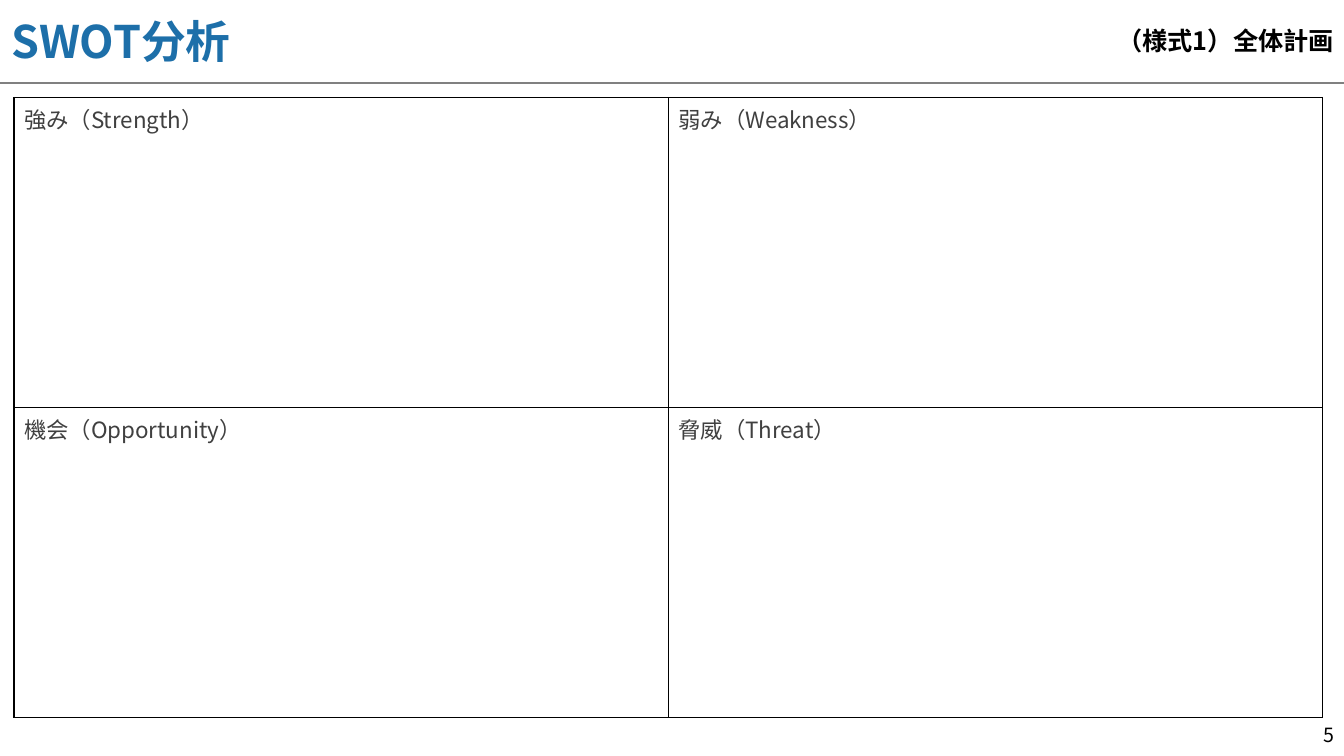
"""Build a one-page SWOT analysis form with a title, a form label and a 2 by 2 grid."""
import pptx
import pptx.dml.color
import pptx.enum.shapes
import pptx.enum.text
import pptx.oxml.ns
import pptx.util
from lxml import etree

Pt = pptx.util.Pt
RGBColor = pptx.dml.color.RGBColor
Align = pptx.enum.text.PP_ALIGN
Anchor = pptx.enum.text.MSO_ANCHOR
qn = pptx.oxml.ns.qn

TITLE = "SWOT分析"
FORM_LABEL = "（様式1）全体計画"
PAGE_NUMBER = "5"
SWOT = [
    ["強み（Strength）", "弱み（Weakness）"],
    ["機会（Opportunity）", "脅威（Threat）"],
]

FONT = "Noto Sans CJK JP"
BLUE = RGBColor(0x1D, 0x6F, 0xA9)
BLACK = RGBColor(0, 0, 0)
GRAY = RGBColor(0x80, 0x80, 0x80)
DARK_GRAY = RGBColor(0x40, 0x40, 0x40)
WIDTH, HEIGHT = 960, 540
RULE_TOP = 59
GRID_LEFT, GRID_TOP, GRID_WIDTH, GRID_HEIGHT = 10, 69.6, 934.8, 442.8
BORDER_WIDTH = 1


def write(frame, text, size, color, bold=False, align=Align.LEFT):
    """Put one formatted paragraph into a text frame."""
    frame.text = text
    frame.word_wrap = True
    para = frame.paragraphs[0]
    para.alignment = align
    para.space_before = Pt(0)
    font = para.font
    font.name, font.size, font.bold = FONT, Pt(size), bold
    font.color.rgb = color
    latin = para._p.pPr.find(qn("a:defRPr")).find(qn("a:latin"))
    east_asian = etree.Element(qn("a:ea"), typeface=FONT)
    latin.addnext(east_asian)


def place(shape, left, top, width, height):
    """Move and size a shape."""
    shape.left, shape.top = Pt(left), Pt(top)
    shape.width, shape.height = Pt(width), Pt(height)


def add_label(page, bounds, anchor, *text_style, **text_options):
    """Add a text box with one formatted paragraph."""
    box = page.shapes.add_textbox(*map(Pt, bounds))
    box.text_frame.vertical_anchor = anchor
    write(box.text_frame, *text_style, **text_options)


def outline(cell):
    """Draw all four borders of a table cell."""
    properties = cell._tc.get_or_add_tcPr()
    for position, side in enumerate(("lnL", "lnR", "lnT", "lnB")):
        border = etree.Element(qn(f"a:{side}"), w=str(Pt(BORDER_WIDTH)))
        fill = etree.SubElement(border, qn("a:solidFill"))
        etree.SubElement(fill, qn("a:srgbClr"), val=str(BLACK))
        properties.insert(position, border)


def add_rule(page):
    """Draw the line below the title."""
    rule = page.shapes.add_connector(
        pptx.enum.shapes.MSO_CONNECTOR.STRAIGHT,
        Pt(0), Pt(RULE_TOP), Pt(WIDTH), Pt(RULE_TOP))
    rule.line.color.rgb = GRAY
    rule.line.width = Pt(1.5)
    etree.SubElement(rule._element.spPr, qn("a:effectLst"))


def add_grid(page):
    """Add the SWOT table with equal columns and rows."""
    rows, columns = len(SWOT), len(SWOT[0])
    grid = page.shapes.add_table(
        rows, columns, Pt(GRID_LEFT), Pt(GRID_TOP),
        Pt(GRID_WIDTH), Pt(GRID_HEIGHT)).table
    grid.first_row = grid.horz_banding = False
    for row, headings in enumerate(SWOT):
        for column, heading in enumerate(headings):
            cell = grid.cell(row, column)
            cell.fill.background()
            write(cell.text_frame, heading, 16, DARK_GRAY)
            outline(cell)


def main():
    """Build and save the deck."""
    deck = pptx.Presentation()
    deck.slide_width, deck.slide_height = Pt(WIDTH), Pt(HEIGHT)
    page = deck.slides.add_slide(deck.slide_layouts.get_by_name("Title Only"))
    title = page.shapes.title
    place(title, 0.7, 0, 762.5, 57.6)
    title.text_frame.vertical_anchor = Anchor.MIDDLE
    write(title.text_frame, TITLE, 32, BLUE, bold=True)
    add_rule(page)
    add_label(page, (912.2, 512.6, 48, 27.4), Anchor.TOP,
              PAGE_NUMBER, 14, BLACK, align=Align.RIGHT)
    add_label(page, (586.1, 5, 373.7, 47.5), Anchor.MIDDLE,
              FORM_LABEL, 18, BLACK, bold=True, align=Align.RIGHT)
    add_grid(page)
    deck.save("out.pptx")


if __name__ == "__main__":
    main()
